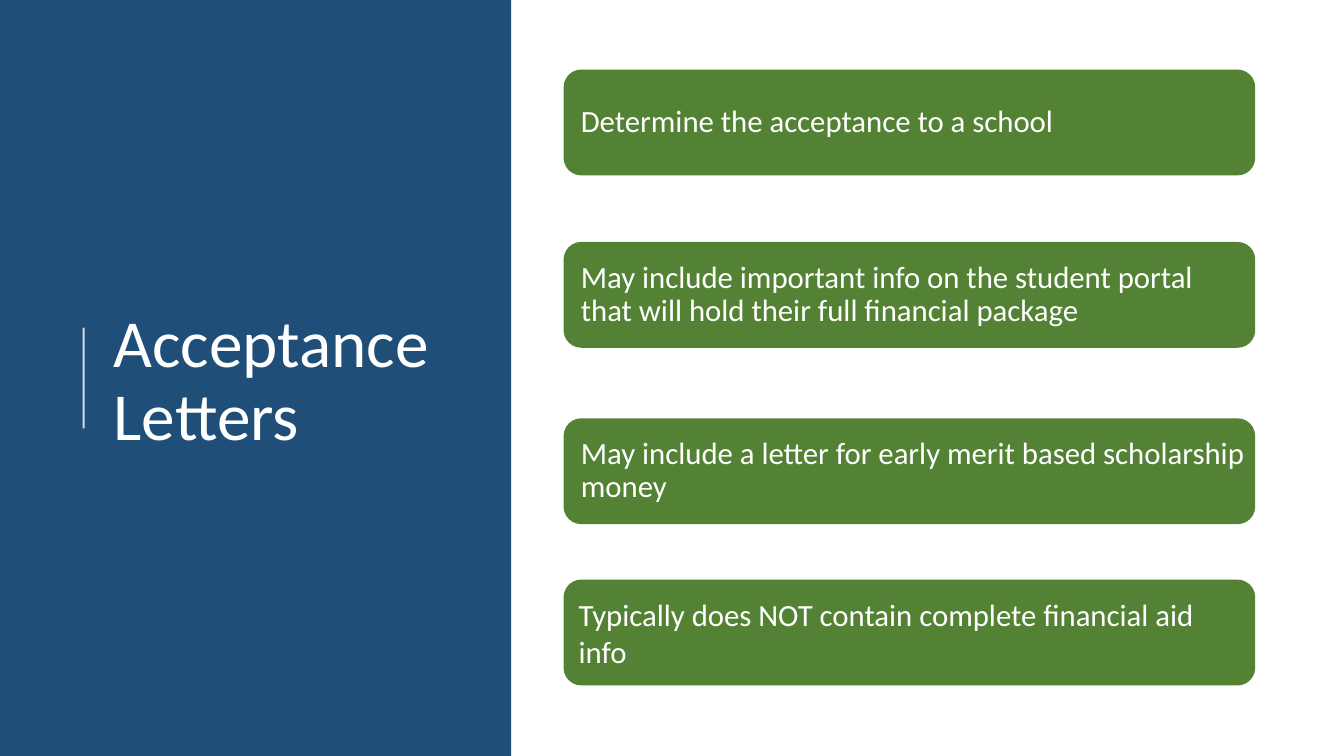
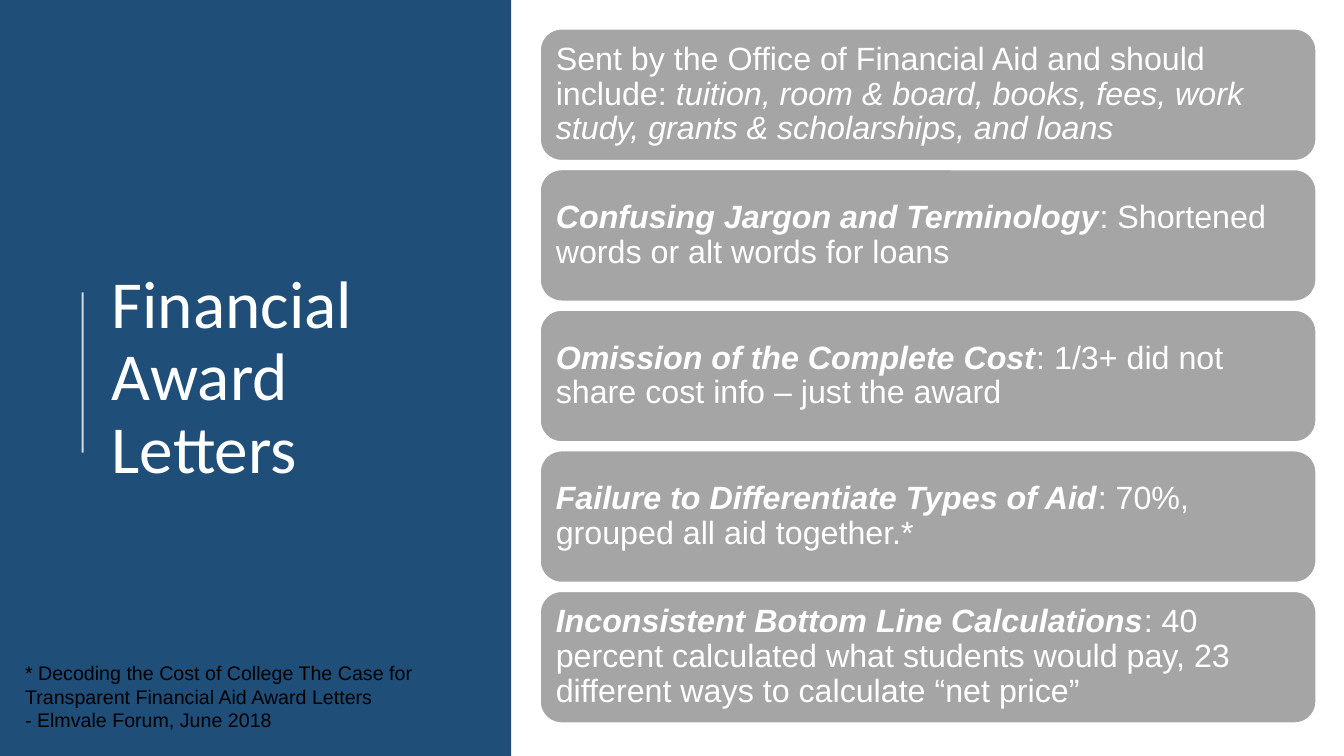
import pptx
import pptx.util
import pptx.dml.color
import pptx.enum.shapes
import pptx.enum.text
import pptx.oxml.ns
import lxml.etree

Inches = pptx.util.Inches
Pt = pptx.util.Pt
SHAPES = pptx.enum.shapes.MSO_SHAPE

NAVY, GREEN, GRAY = "1F4E79", "548235", "A5A5A5"
WHITE, BLACK = "FFFFFF", "000000"


def color(hex_text):
    return pptx.dml.color.RGBColor.from_string(hex_text)


def add_card(slide, left, top, width, height, fill, insets, font_name, size, spacing, runs):
    """Rounded card with runs given as (text, bold, italic)."""
    card = slide.shapes.add_shape(
        SHAPES.ROUNDED_RECTANGLE, Inches(left), Inches(top), Inches(width), Inches(height))
    card.shadow.inherit = False
    card.fill.solid()
    card.fill.fore_color.rgb = color(fill)
    card.line.fill.background()
    frame = card.text_frame
    frame.word_wrap = True
    frame.vertical_anchor = pptx.enum.text.MSO_ANCHOR.MIDDLE
    frame.margin_left, frame.margin_right = Inches(insets[0]), Inches(insets[1])
    paragraph = frame.paragraphs[0]
    paragraph.alignment = pptx.enum.text.PP_ALIGN.LEFT
    paragraph.line_spacing = spacing
    paragraph.font.name = font_name
    paragraph.font.size = Pt(size)
    paragraph.font.color.rgb = color(WHITE)
    for text, bold, italic in runs:
        run = paragraph.add_run()
        run.text = text
        run.font.bold, run.font.italic = bold, italic
    return card


presentation = pptx.Presentation()
presentation.slide_width = Inches(13.33)
presentation.slide_height = Inches(7.5)

# Shared side panel, accent line and title
# title, title left, title height, line x, line top, line bottom
headings = [
    ("Acceptance\vLetters", 1.03, 6.02, 0.83, 3.25, 4.25),
    ("Financial\vAward\vLetters", 1.01, 5.96, 0.82, 2.9, 4.49),
]
slides = []
for title, title_left, title_height, line_x, line_top, line_bottom in headings:
    slide = presentation.slides.add_slide(presentation.slide_layouts[6])
    slides.append(slide)

    panel = slide.shapes.add_shape(SHAPES.RECTANGLE, 0, 0, Inches(5.07), Inches(7.5))
    panel.shadow.inherit = False
    panel.fill.solid()
    panel.fill.fore_color.rgb = color(NAVY)
    panel.line.fill.background()

    accent = slide.shapes.add_connector(
        pptx.enum.shapes.MSO_CONNECTOR.STRAIGHT,
        Inches(line_x), Inches(line_bottom), Inches(line_x), Inches(line_top))
    accent.line.color.rgb = color(WHITE)
    accent.line.width = Pt(1.5)
    qn = pptx.oxml.ns.qn
    properties = accent.element.spPr
    line_color = next(properties.iter(qn("a:srgbClr")))
    lxml.etree.SubElement(line_color, qn("a:alpha")).set("val", "80000")
    lxml.etree.SubElement(properties, qn("a:effectLst"))

    title_box = slide.shapes.add_textbox(
        Inches(title_left), Inches(0.78), Inches(3.7), Inches(title_height))
    title_box.text_frame.word_wrap = True
    title_box.text_frame.vertical_anchor = pptx.enum.text.MSO_ANCHOR.MIDDLE
    title_box.text_frame.text = title
    paragraph = title_box.text_frame.paragraphs[0]
    paragraph.line_spacing = 0.9
    paragraph.font.name = "Calibri"
    paragraph.font.size = Pt(48)
    paragraph.font.color.rgb = color(WHITE)

acceptance_slide, award_slide = slides

# Acceptance letters: top, line spacing, insets, text
acceptance_cards = [
    (0.69, 0.9, (0.12, 0.03), "Determine the acceptance to a school"),
    (2.4, 0.9, (0.12, 0.03), "May include important info on the student portal "
     "that will hold their full financial package"),
    (4.15, 0.9, (0.12, 0.03), "May include a letter for early merit based scholarship money"),
    (5.75, 1.0, (0.1, 0.1), "Typically does NOT contain complete financial aid info"),
]
for top, spacing, insets, text in acceptance_cards:
    add_card(acceptance_slide, 5.59, top, 6.86, 1.05, GREEN, insets,
             "Calibri", 22, spacing, [(text, False, False)])

# Award letters: evenly stacked cards
award_cards = [
    [("Sent by the Office of Financial Aid and should include: ", False, False),
     ("tuition, room & board, books, fees, work study, grants & scholarships, and loans",
      False, True)],
    [("Confusing Jargon and Terminology", True, True),
     (": Shortened words or alt words for loans", False, False)],
    [("Omission of the Complete Cost", True, True),
     (": 1/3+ did not share cost info – just the award", False, False)],
    [("Failure to Differentiate Types of Aid", True, True),
     (": 70%, grouped all aid together.*", False, False)],
    [("Inconsistent Bottom Line Calculations", True, True),
     (": 40 percent calculated what students would pay, "
      "23 different ways to calculate “net price”", False, False)],
]
first_top, last_top, card_height = 0.28, 5.86, 1.32
card_step = (last_top - first_top) / (len(award_cards) - 1)
for index, runs in enumerate(award_cards):
    card = add_card(award_slide, 5.35, first_top + index * card_step, 7.71,
                    card_height, GRAY, (0.1, 0.1), "Arial", 23, 0.9, runs)
    card.line.color.rgb = color(WHITE)
    card.line.width = Pt(2)

# Source note
note = award_slide.shapes.add_textbox(Inches(0.15), Inches(6.51), Inches(4.78), Inches(0.81))
note.text_frame.word_wrap = True
note.text_frame.text = (
    "* Decoding the Cost of College The Case for Transparent Financial Aid Award Letters\n"
    "- Elmvale Forum, June 2018")
for paragraph in note.text_frame.paragraphs:
    paragraph.font.name = "Arial"
    paragraph.font.size = Pt(14)
    paragraph.font.color.rgb = color(BLACK)

presentation.save("out.pptx")
